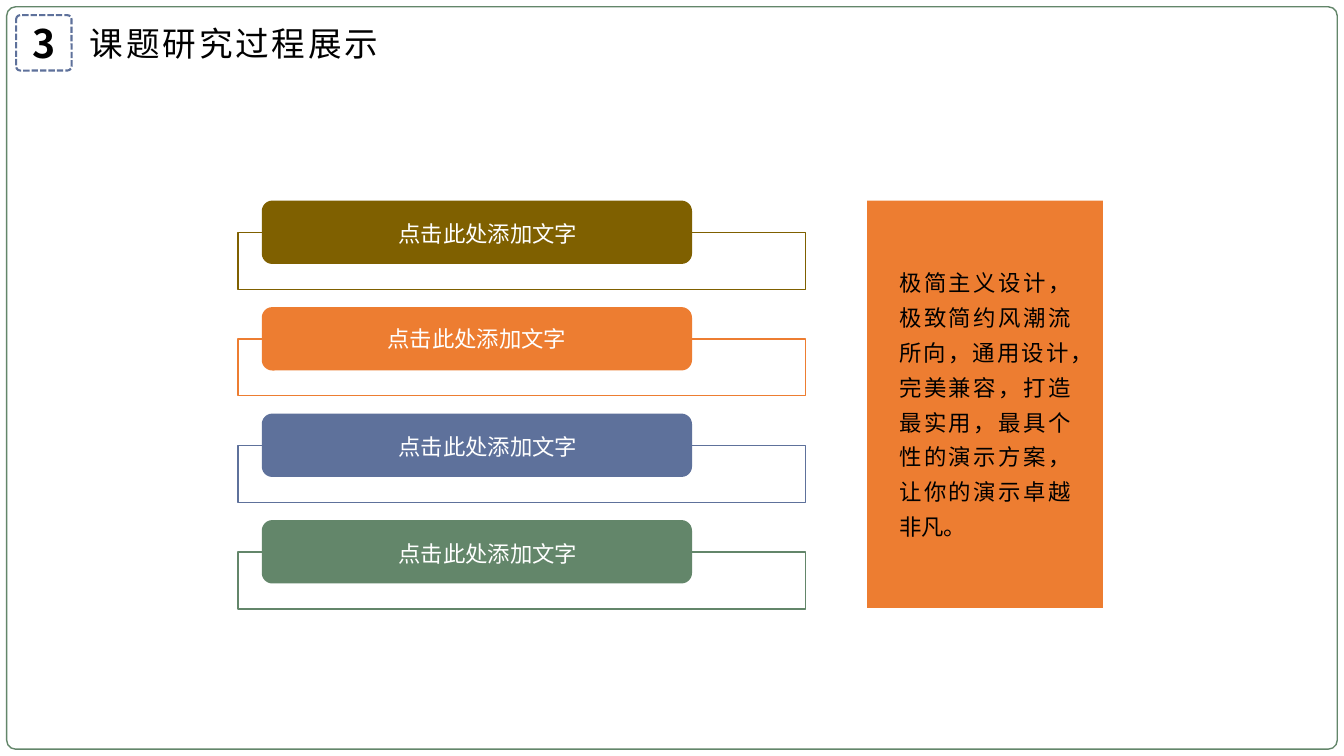
from dataclasses import dataclass

from lxml.etree import SubElement
from pptx import Presentation
from pptx.dml.color import RGBColor
from pptx.enum.dml import MSO_LINE
from pptx.enum.shapes import MSO_SHAPE as Preset
from pptx.enum.text import MSO_ANCHOR as Anchor, MSO_AUTO_SIZE as AutoSize, PP_ALIGN as Align
from pptx.oxml.ns import qn
from pptx.util import Inches, Pt


@dataclass(frozen=True)
class Theme:
    font: str = "Noto Sans CJK SC"
    black: str = "000000"
    white: str = "FFFFFF"
    olive: str = "7F6000"
    orange: str = "ED7D31"
    blue: str = "5E719B"
    green: str = "63866A"
    number_size: int = 28
    title_size: int = 24
    body_size: int = 16


@dataclass(frozen=True)
class Box:
    left: float
    top: float
    width: float
    height: float

    def inner(self, left, top, width, height):
        """Return the box at the given shares of this one."""
        return Box(self.left + left * self.width, self.top + top * self.height,
                   width * self.width, height * self.height)

    def lengths(self):
        return [Inches(value) for value in (self.left, self.top, self.width, self.height)]


THEME = Theme()
SLIDE = Box(0, 0, 13.33, 7.5)
HEADER = Box(0.16, 0.15, 3.76, 0.55)
ITEM_LIST = Box(2.36, 1.99, 5.63, 4.05)
PANEL = Box(8.6, 1.99, 2.34, 4.04)

ITEM_HEIGHT = 0.88
INDENT = 0.32
# Label, colour, left inset in inches, line spacing
ITEMS = [
    ("点击此处添加文字", THEME.olive, INDENT, 1.1),
    ("点击此处添加文字", THEME.orange, 0.1, 1.0),
    ("点击此处添加文字", THEME.blue, INDENT, 1.1),
    ("点击此处添加文字", THEME.green, INDENT, 1.1),
]
PANEL_TEXT = ("极简主义设计，极致简约风潮流所向，通用设计，完美兼容，"
              "打造最实用，最具个性的演示方案，让你的演示卓越非凡。")


def add_block(slide, preset, box, fill=None, line=None, line_width=1, corner=None):
    shape = slide.shapes.add_shape(preset, *box.lengths())
    shape.shadow.inherit = False
    if corner is not None:
        shape.adjustments[0] = corner
    if fill:
        shape.fill.solid()
        shape.fill.fore_color.rgb = RGBColor.from_string(fill)
    else:
        shape.fill.background()
    if line:
        shape.line.color.rgb = RGBColor.from_string(line)
        shape.line.width = Pt(line_width)
    else:
        shape.line.fill.background()
    return shape


def write(shape, text, size, color, align=Align.CENTER, bold=False, tracking=0):
    """Fill the shape with one paragraph, tracked by a number of points."""
    frame = shape.text_frame
    frame.word_wrap = True
    frame.auto_size = AutoSize.NONE
    frame.vertical_anchor = Anchor.MIDDLE
    frame.text = text
    paragraph = frame.paragraphs[0]
    paragraph.alignment = align
    font = paragraph.font
    font.name, font.size, font.bold = THEME.font, Pt(size), bold
    font.color.rgb = RGBColor.from_string(color)
    properties = paragraph._p.pPr.find(qn("a:defRPr"))
    SubElement(properties, qn("a:ea"), typeface=THEME.font)
    if tracking:
        properties.set("spc", str(tracking * 100))
    return paragraph


def add_header(slide, box, number, title):
    badge_share = box.height / box.width
    badge = add_block(slide, Preset.ROUNDED_RECTANGLE, box.inner(0, 0, badge_share, 1),
                      line=THEME.blue, line_width=1.5, corner=0.076)
    badge.line.dash_style = MSO_LINE.SQUARE_DOT
    frame = badge.text_frame
    frame.margin_left = frame.margin_top = frame.margin_right = frame.margin_bottom = 0
    write(badge, number, THEME.number_size, THEME.black, bold=True)

    heading = slide.shapes.title
    title_box = box.inner(0.15, 0, 0.85, 1)
    heading.left, heading.top, heading.width, heading.height = title_box.lengths()
    write(heading, title, THEME.title_size, THEME.black, tracking=2)


def add_item(slide, box, label, color, inset, line_spacing):
    add_block(slide, Preset.RECTANGLE, box.inner(0, 0.36, 1, 0.64), line=color)
    bar = add_block(slide, Preset.ROUNDED_RECTANGLE, box.inner(0.042, 0, 0.758, 0.715), fill=color)
    bar.text_frame.margin_left = Inches(inset)
    paragraph = write(bar, label, THEME.body_size, THEME.white)
    paragraph.line_spacing = line_spacing


def add_item_list(slide, box, items):
    share = ITEM_HEIGHT / box.height
    pitch = (1 - share) / (len(items) - 1)
    for row, item in enumerate(items):
        add_item(slide, box.inner(0, row * pitch, 1, share), *item)


def add_panel(slide, box, text):
    add_block(slide, Preset.RECTANGLE, box, fill=THEME.orange)
    text_box = slide.shapes.add_textbox(*box.inner(0.094, 0.136, 0.812, 0.718).lengths())
    paragraph = write(text_box, text, THEME.body_size, THEME.black, Align.JUSTIFY)
    text_box.text_frame.vertical_anchor = Anchor.TOP
    paragraph.line_spacing = 1.3
    paragraph.space_before = paragraph.space_after = Pt(6)


def add_process_slide(presentation):
    slide = presentation.slides.add_slide(presentation.slide_layouts[5])
    add_block(slide, Preset.ROUNDED_RECTANGLE, SLIDE.inner(0.005, 0.009, 0.99, 0.982),
              line=THEME.green, corner=0.012)
    add_header(slide, HEADER, "3", "课题研究过程展示")
    add_panel(slide, PANEL, PANEL_TEXT)
    add_item_list(slide, ITEM_LIST, ITEMS)


def main():
    presentation = Presentation()
    presentation.slide_width = Inches(SLIDE.width)
    presentation.slide_height = Inches(SLIDE.height)
    add_process_slide(presentation)
    presentation.save("out.pptx")


if __name__ == "__main__":
    main()
